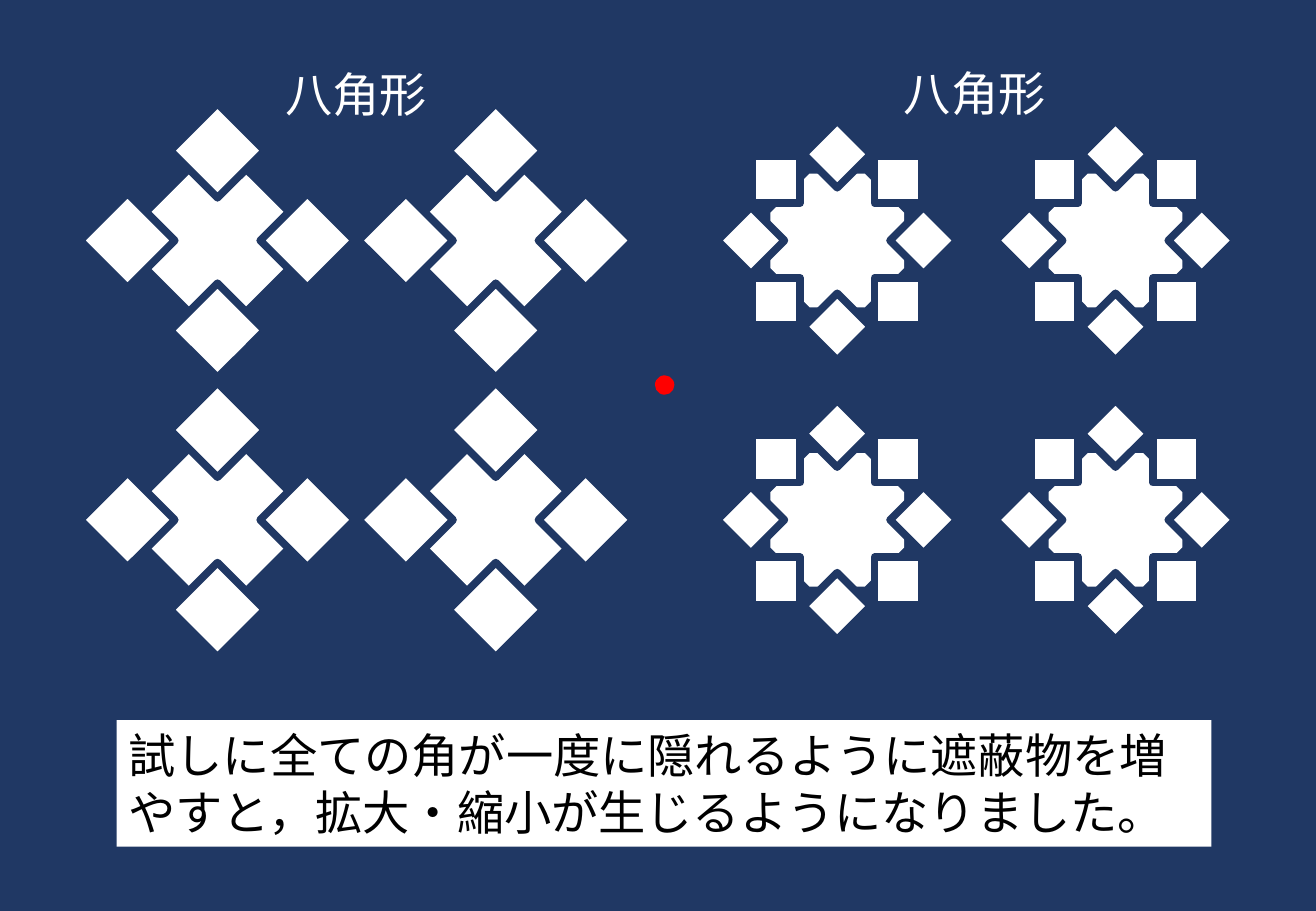
from math import cos, radians, sin

from pptx import Presentation
from pptx.dml.color import RGBColor
from pptx.enum.shapes import MSO_SHAPE
from pptx.enum.text import MSO_ANCHOR, PP_ALIGN
from pptx.util import Inches, Pt

COLORS = {"navy": "203864", "white": "FFFFFF", "black": "000000", "red": "FF0000"}
CORE = 1.1


def tint(name):
    """Return the named colour."""
    return RGBColor.from_string(COLORS[name])


def add_form(slide, kind, box, fill, edge=None):
    """Add a filled shape in the box, with an edge if one is named."""
    form = slide.shapes.add_shape(kind, *map(Inches, box))
    form.shadow.inherit = False
    form.fill.solid()
    form.fill.fore_color.rgb = tint(fill)
    if edge:
        form.line.color.rgb = tint(edge)
        form.line.width = Pt(4.5)
    else:
        form.line.fill.background()
    return form


def write(form, text, color, wrap):
    """Write one left-aligned run of text in the form."""
    frame = form.text_frame
    frame.word_wrap = wrap
    frame.vertical_anchor = MSO_ANCHOR.TOP
    para = frame.paragraphs[0]
    para.alignment = PP_ALIGN.LEFT
    run = para.add_run()
    run.text = text
    run.font.size = Pt(28)
    run.font.name = "Calibri"
    run.font.color.rgb = tint(color)


def add_star(slide, x, y, count, reach, size):
    """Draw an octagon centred at x, y with a ring of tiles over its corners."""
    box = (x - CORE / 2, y - CORE / 2, CORE, CORE)
    add_form(slide, MSO_SHAPE.OCTAGON, box, "white")
    for step in range(count):
        angle = 360 / count * step
        left = x + reach * cos(radians(angle)) - size / 2
        top = y + reach * sin(radians(angle)) - size / 2
        tile = add_form(slide, MSO_SHAPE.RECTANGLE, (left, top, size, size),
                        "white", "navy")
        tile.rotation = 315 - angle % 90


def add_panel(slide, x, y, count, reach, size):
    """Draw a two by two grid of stars from the centre of the first."""
    for row in range(2):
        for col in range(2):
            add_star(slide, x + 2.29 * col, y + 2.3 * row, count, reach, size)


def add_label(slide, box):
    """Add the heading over a panel."""
    label = slide.shapes.add_textbox(*map(Inches, box))
    write(label, "八角形", "white", False)


def add_note(slide, box):
    """Add the white caption box."""
    note = add_form(slide, MSO_SHAPE.RECTANGLE, box, "white")
    write(note, "試しに全ての角が一度に隠れるように遮蔽物を増やすと，"
          "拡大・縮小が生じるようになりました。", "black", True)


def main():
    """Build the slide and save it."""
    deck = Presentation()
    deck.slide_width = Inches(10.83)
    deck.slide_height = Inches(7.5)
    slide = deck.slides.add_slide(deck.slide_layouts[6])
    add_form(slide, MSO_SHAPE.RECTANGLE, (0, 0, 10.83, 7.5), "navy")
    add_note(slide, (0.96, 5.93, 9.01, 1.04))
    add_panel(slide, 1.79, 1.98, 4, 0.74, 0.55)
    add_panel(slide, 6.89, 1.98, 8, 0.71, 0.39)
    add_form(slide, MSO_SHAPE.OVAL, (5.39, 3.09, 0.16, 0.16), "red")
    add_label(slide, (2.25, 0.49, 1.38, 0.57))
    add_label(slide, (7.34, 0.48, 1.38, 0.57))
    deck.save("out.pptx")


if __name__ == "__main__":
    main()
